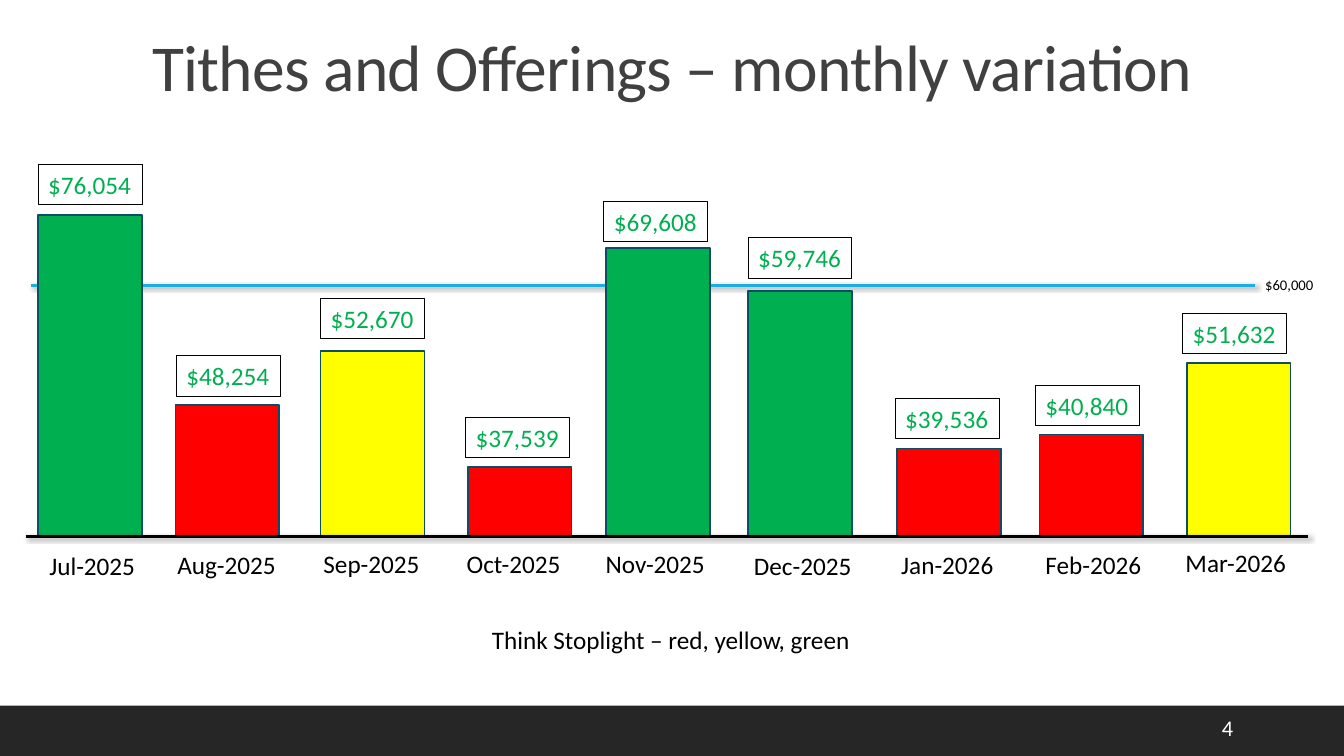
from dataclasses import dataclass

from lxml.etree import SubElement
from pptx import Presentation
from pptx.dml.color import RGBColor
from pptx.enum.shapes import MSO_CONNECTOR, MSO_SHAPE
from pptx.enum.text import MSO_ANCHOR, MSO_AUTO_SIZE, PP_ALIGN
from pptx.oxml.ns import qn
from pptx.shapes.autoshape import Shape
from pptx.slide import Slide
from pptx.text.text import TextFrame, _Run
from pptx.util import Inches, Pt

FONT = "Calibri"
BLACK, WHITE = "000000", "FFFFFF"
GREEN, YELLOW, RED = "00B050", "FFFF00", "FF0000"
BAR_OUTLINE = "0C4C64"
AXIS_TOP = 5.32
TARGET_TOP = 2.83
BAR_WIDTH = 1.03
TEXT_HEIGHT = 0.4


@dataclass
class Month:
    name: str
    amount: str
    color: str
    bar_left: float
    bar_top: float
    amount_left: float
    amount_top: float
    name_left: float
    name_top: float
    name_width: float = 1.37


MONTHS = [
    Month("Jul-2025", "$76,054", GREEN, 0.38, 2.13, 0.38, 1.63, 0.39, 5.41, 1.15),
    Month("Aug-2025", "$48,254", RED, 1.74, 4.02, 1.75, 3.53, 1.66, 5.4, 1.25),
    Month("Sep-2025", "$52,670", YELLOW, 3.18, 3.48, 3.18, 2.96, 3.11, 5.39),
    Month("Oct-2025", "$37,539", RED, 4.64, 4.63, 4.62, 4.14, 4.53, 5.39),
    Month("Nov-2025", "$69,608", GREEN, 6.01, 2.46, 5.99, 2.0, 5.91, 5.39),
    Month("Dec-2025", "$59,746", GREEN, 7.42, 2.89, 7.42, 2.36, 7.38, 5.41),
    Month("Jan-2026", "$39,536", RED, 8.9, 4.45, 8.88, 3.95, 8.84, 5.4),
    Month("Feb-2026", "$40,840", RED, 10.31, 4.31, 10.27, 3.82, 10.27, 5.4, 1.48),
    Month("Mar-2026", "$51,632", YELLOW, 11.77, 3.6, 11.73, 3.11, 11.66, 5.38),
]


def rgb(color: str) -> RGBColor:
    return RGBColor.from_string(color)


def add_run(frame: TextFrame, text: str, size: float, color: str) -> _Run:
    run = frame.paragraphs[0].add_run()
    run.text = text
    run.font.name = FONT
    run.font.size = Pt(size)
    run.font.color.rgb = rgb(color)
    return run


def add_text(slide: Slide, text: str, left: float, top: float, width: float,
             height: float = TEXT_HEIGHT, size: float = 18, color: str = BLACK) -> Shape:
    box = slide.shapes.add_textbox(Inches(left), Inches(top), Inches(width), Inches(height))
    box.text_frame.word_wrap = True
    add_run(box.text_frame, text, size, color)
    return box


def add_rectangle(slide: Slide, left: float, top: float, width: float, height: float,
                  fill: str, outline: str = "", outline_width: float = 0) -> Shape:
    shape = slide.shapes.add_shape(MSO_SHAPE.RECTANGLE, Inches(left), Inches(top),
                                   Inches(width), Inches(height))
    shape.shadow.inherit = False
    shape.fill.solid()
    shape.fill.fore_color.rgb = rgb(fill)
    if outline:
        shape.line.color.rgb = rgb(outline)
        shape.line.width = Pt(outline_width)
    else:
        shape.line.fill.background()
    return shape


def add_shadowed_line(slide: Slide, left: float, right: float, top: float, color: str) -> None:
    line = slide.shapes.add_connector(MSO_CONNECTOR.STRAIGHT, Inches(left), Inches(top),
                                      Inches(right), Inches(top))
    line.line.color.rgb = rgb(color)
    line.line.width = Pt(2)
    effects = SubElement(line._element.spPr, qn("a:effectLst"))
    shadow = SubElement(effects, qn("a:outerShdw"), blurRad=str(Pt(3)), dist=str(Pt(2)),
                        dir=str(45 * 60000), algn="tl", rotWithShape="0")
    shade = SubElement(shadow, qn("a:srgbClr"), val=BLACK)
    SubElement(shade, qn("a:alpha"), val="60000")


def add_title(slide: Slide, text: str) -> None:
    title = slide.shapes.title
    title.left, title.top = Inches(1.02), Inches(0.14)
    title.width, title.height = Inches(11.29), Inches(0.96)
    frame = title.text_frame
    frame.auto_size = MSO_AUTO_SIZE.NONE
    frame.vertical_anchor = MSO_ANCHOR.BOTTOM
    frame.paragraphs[0].alignment = PP_ALIGN.CENTER
    frame.paragraphs[0].line_spacing = 0.9
    run = add_run(frame, text, 46.8, "404040")
    run.font._element.set("spc", "-50")


def add_amount(slide: Slide, month: Month) -> None:
    label = add_rectangle(slide, month.amount_left, month.amount_top, BAR_WIDTH,
                          TEXT_HEIGHT, WHITE, BLACK, 0.75)
    frame = label.text_frame
    frame.word_wrap = False
    frame.vertical_anchor = MSO_ANCHOR.TOP
    frame.paragraphs[0].alignment = PP_ALIGN.LEFT
    add_run(frame, month.amount, 18, GREEN)


def main() -> None:
    presentation = Presentation()
    presentation.slide_width, presentation.slide_height = Inches(13.33), Inches(7.5)
    slide = presentation.slides.add_slide(presentation.slide_layouts[5])

    # Footer band, page number and title
    add_rectangle(slide, 0, 7, 13.33, 0.5, "262626")
    number = add_text(slide, "4", 12.02, 7.02, 0.85, size=16, color=WHITE)
    number.text_frame.vertical_anchor = MSO_ANCHOR.MIDDLE
    add_title(slide, "Tithes and Offerings – monthly variation")

    # Target line, behind the bars
    add_shadowed_line(slide, 0.31, 12.45, TARGET_TOP, "1CADE4")
    add_text(slide, "$60,000", 12.45, 2.69, 0.69, 0.28, 10.5)

    # Monthly bars with amounts and names
    for month in MONTHS:
        add_rectangle(slide, month.bar_left, month.bar_top, BAR_WIDTH,
                      AXIS_TOP - month.bar_top, month.color, BAR_OUTLINE, 1.25)
        add_amount(slide, month)
        add_text(slide, month.name, month.name_left, month.name_top, month.name_width)

    # Baseline and colour hint
    add_shadowed_line(slide, 0.26, 12.97, AXIS_TOP, BLACK)
    add_text(slide, "Think Stoplight – red, yellow, green", 4.78, 6.14, 3.77)

    presentation.save("out.pptx")


if __name__ == "__main__":
    main()
